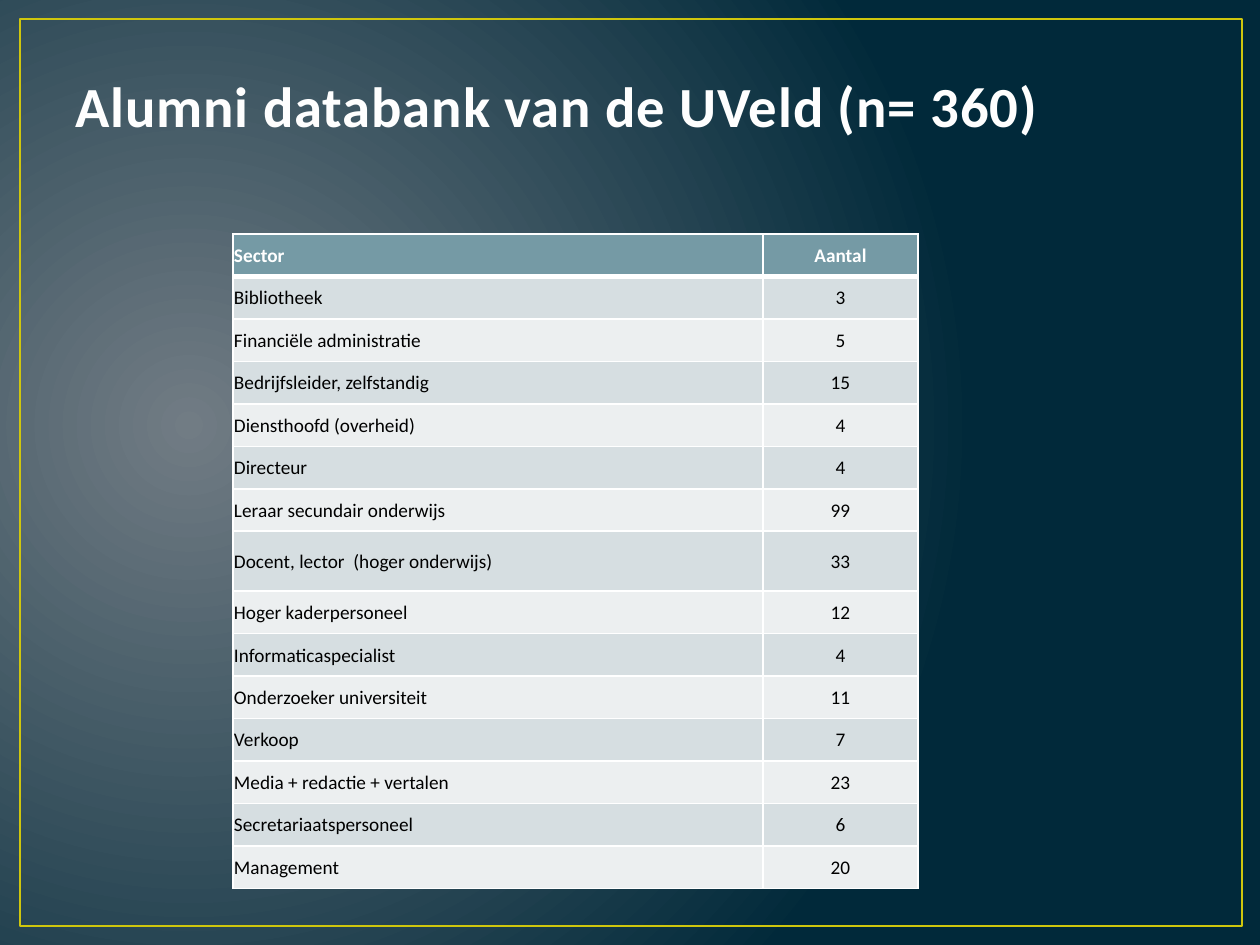
from lxml.etree import SubElement
from pptx import Presentation
from pptx.dml.color import RGBColor
from pptx.enum.shapes import MSO_SHAPE as Shape
from pptx.enum.text import MSO_ANCHOR as Anchor, MSO_AUTO_SIZE as AutoSize, PP_ALIGN as Align
from pptx.oxml.ns import qn
from pptx.util import Emu, Pt

FONT = "Calibri"
WHITE = "FFFFFF"
TALL_ROW = 7
ROWS = [
    ("Sector", "Aantal"),
    ("Bibliotheek", "3"),
    ("Financiële administratie", "5"),
    ("Bedrijfsleider, zelfstandig", "15"),
    ("Diensthoofd (overheid)", "4"),
    ("Directeur", "4"),
    ("Leraar secundair onderwijs", "99"),
    ("Docent, lector  (hoger onderwijs)", "33"),
    ("Hoger kaderpersoneel", "12"),
    ("Informaticaspecialist", "4"),
    ("Onderzoeker universiteit", "11"),
    ("Verkoop", "7"),
    ("Media + redactie + vertalen", "23"),
    ("Secretariaatspersoneel", "6"),
    ("Management", "20"),
]


def px(length):
    return Emu(round(length * 914400 / 126))


def color(value):
    return RGBColor.from_string(value)


def add_run(paragraph, text, size, value, bold):
    run = paragraph.add_run()
    run.text = text
    run.font.name = FONT
    run.font.size = Pt(size)
    run.font.bold = bold
    run.font.color.rgb = color(value)
    return run


def add_line(parent, tag, value, width):
    line = SubElement(parent, qn(tag), w=str(Pt(width)))
    fill = SubElement(line, qn("a:solidFill"))
    SubElement(fill, qn("a:srgbClr"), val=value)
    return line


def paint_background(slide):
    fill = slide.background.fill
    fill.gradient()
    for stop, position, value in zip(fill.gradient_stops, (0, 1), ("717C84", "01293A")):
        stop.position = position
        stop.color.rgb = color(value)
    gradient = next(slide.element.iter(qn("a:gradFill")))
    gradient.remove(gradient.find(qn("a:lin")))
    circle = SubElement(gradient, qn("a:path"), path="circle")
    SubElement(circle, qn("a:fillToRect"), l="15000", t="50000", r="85000", b="60000")


def add_frame(slide, left, top, width, height):
    frame = slide.shapes.add_shape(Shape.RECTANGLE, px(left), px(top), px(width), px(height))
    frame.shadow.inherit = False
    frame.fill.background()
    frame.line.color.rgb = color("CFC60D")
    frame.line.width = Pt(1.5)


def place_title(slide, left, top, width, height):
    title = slide.shapes.title
    title.left, title.top, title.width, title.height = map(px, (left, top, width, height))
    text_frame = title.text_frame
    text_frame.word_wrap = True
    text_frame.auto_size = AutoSize.NONE
    text_frame.vertical_anchor = Anchor.BOTTOM
    paragraph = text_frame.paragraphs[0]
    paragraph.alignment = Align.LEFT
    run = add_run(paragraph, "Alumni databank van de UVeld (n= 360)", 32.4, "FEFEFE", True)
    properties = run.font._element
    properties.set("spc", "50")
    properties.insert(0, add_line(properties, "a:ln", "384F55", 1.05))


def fill_cell(cell, text, is_header, is_count, fill):
    cell.margin_left = cell.margin_right = cell.margin_top = px(1)
    cell.margin_bottom = 0
    cell.vertical_anchor = Anchor.MIDDLE
    paragraph = cell.text_frame.paragraphs[0]
    paragraph.alignment = Align.CENTER if is_count else Align.LEFT
    add_run(paragraph, text, 11, WHITE if is_header else "000000", is_header)
    properties = cell._tc.get_or_add_tcPr()
    for side in "LRTB":
        add_line(properties, f"a:ln{side}", WHITE, 3 if is_header and side == "B" else 1)
    cell.fill.solid()
    cell.fill.fore_color.rgb = color(fill)


def add_sector_table(slide, left, top, width, height):
    count_width, tall_height = 155, 60
    row_height = (height - tall_height) / (len(ROWS) - 1)
    table = slide.shapes.add_table(
        len(ROWS), 2, px(left), px(top), px(width), px(height)).table
    table.columns[0].width = px(width - count_width)
    table.columns[1].width = px(count_width)
    for index, values in enumerate(ROWS):
        table.rows[index].height = px(tall_height if index == TALL_ROW else row_height)
        is_header = index == 0
        fill = "759AA5" if is_header else ("ECEFF0", "D6DEE1")[index % 2]
        for column, text in enumerate(values):
            fill_cell(table.cell(index, column), text, is_header, column == 1, fill)


def main():
    presentation = Presentation()
    presentation.slide_width = px(1260)
    presentation.slide_height = px(945)
    slide = presentation.slides.add_slide(presentation.slide_layouts[5])
    paint_background(slide)
    add_frame(slide, 20, 19, 1222, 907)
    place_title(slide, 63, 38, 1134, 107)
    add_sector_table(slide, 233, 234, 685, 655)
    presentation.save("out.pptx")


if __name__ == "__main__":
    main()
